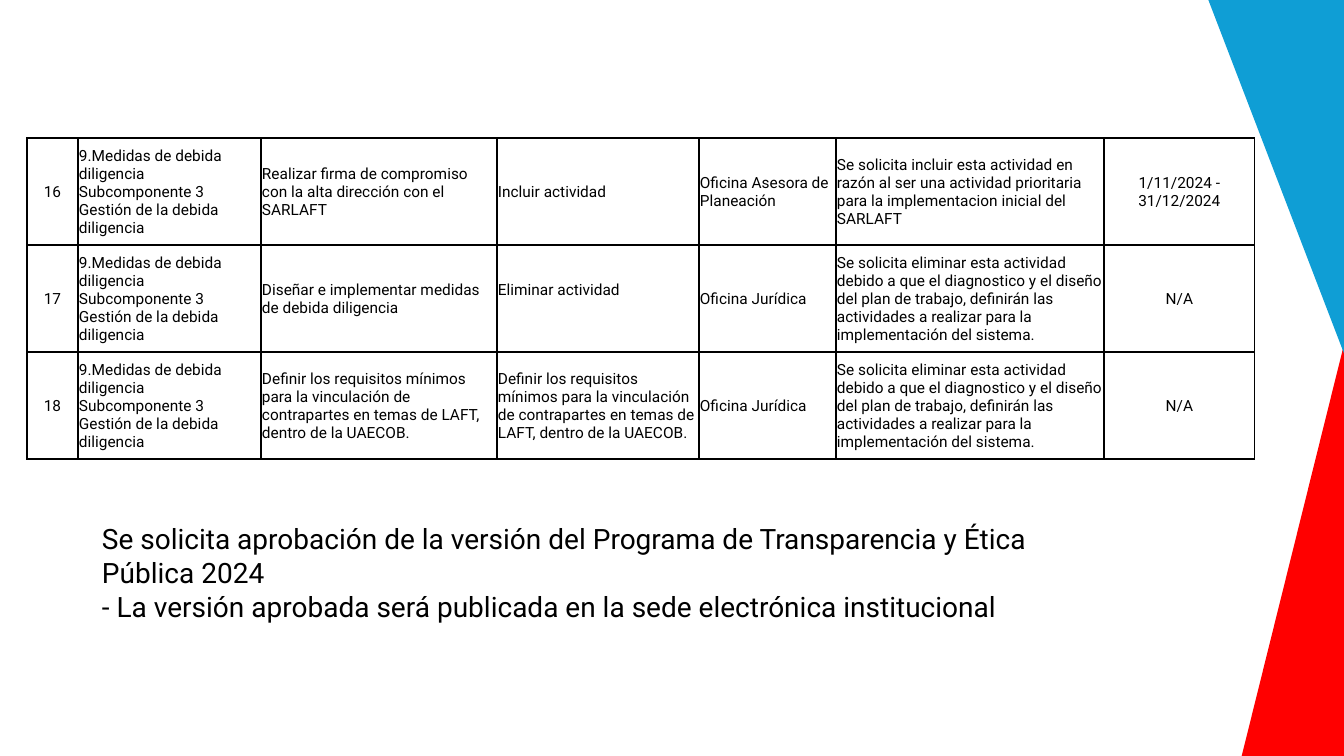
from dataclasses import dataclass

from lxml import etree
from pptx import Presentation
from pptx.dml.color import RGBColor
from pptx.enum.shapes import MSO_SHAPE
from pptx.enum.text import MSO_ANCHOR, MSO_AUTO_SIZE, PP_ALIGN
from pptx.oxml.ns import qn
from pptx.slide import Slide
from pptx.table import _Cell
from pptx.text.text import _Paragraph
from pptx.util import Emu, Pt

SLIDE_WIDTH, SLIDE_HEIGHT = 1344, 756
EMU_PER_PX = 12192000 / SLIDE_WIDTH
BLANK_LAYOUT = 6
RIGHT_TRIANGLE = MSO_SHAPE.RIGHT_TRIANGLE
MIDDLE = MSO_ANCHOR.MIDDLE
FIT_SHAPE = MSO_AUTO_SIZE.SHAPE_TO_FIT_TEXT
LEFT, CENTER = PP_ALIGN.LEFT, PP_ALIGN.CENTER

FONT = "Roboto"
COLORS = {"text": "000000", "border": "000000", "cell": "FFFFFF",
          "red": "FF0000", "blue": "0F9ED5"}
BORDER_WIDTH = Pt(1)
BORDER_SIDES = ("a:lnL", "a:lnR", "a:lnT", "a:lnB")

TABLE_LEFT, TABLE_TOP, ROW_HEIGHT = 27, 138, 107
TEXT_LINE = 18


@dataclass(frozen=True)
class Triangle:
    left: int
    top: int
    width: int
    height: int
    color: str
    rotation: int = 0
    mirrored: bool = False


@dataclass(frozen=True)
class Column:
    width: int
    align: PP_ALIGN = LEFT


@dataclass(frozen=True)
class Activity:
    number: str
    name: str
    change: str
    office: str
    reason: str
    dates: str
    change_lift: int = 0


TRIANGLES = (
    Triangle(1207, 345, 137, 551, "red", mirrored=True),
    Triangle(1208, -1, 137, 357, "blue", rotation=180),
)
COLUMNS = (Column(51, CENTER), Column(183), Column(236), Column(202),
           Column(137), Column(268), Column(151, CENTER))

COMPONENT = ("9.Medidas de debida diligencia\vSubcomponente 3\v"
             "Gestión de la debida diligencia")
REQUIREMENTS = ("Definir los requisitos mínimos para la vinculación de "
                "contrapartes en temas de LAFT, dentro de la UAECOB.")
LEGAL_OFFICE = "Oficina Jurídica"
REMOVAL_REASON = ("Se solicita eliminar esta actividad debido a que el diagnostico "
                  "y el diseño del plan de trabajo, definirán las actividades a "
                  "realizar para la implementación del sistema.")
ACTIVITIES = (
    Activity("16", "Realizar firma de compromiso con la alta dirección con el SARLAFT",
             "Incluir actividad", "Oficina Asesora de Planeación",
             "Se solicita incluir esta actividad en razón al ser una actividad "
             "prioritaria para la implementacion inicial del SARLAFT",
             "1/11/2024 - 31/12/2024"),
    Activity("17", "Diseñar e implementar medidas de debida diligencia",
             "Eliminar actividad", LEGAL_OFFICE, REMOVAL_REASON, "N/A",
             change_lift=TEXT_LINE),
    Activity("18", REQUIREMENTS, REQUIREMENTS, LEGAL_OFFICE, REMOVAL_REASON, "N/A"),
)
APPROVAL = (
    "Se solicita aprobación de la versión del Programa de Transparencia y Ética "
    "Pública 2024",
    "- La versión aprobada será publicada en la sede electrónica institucional",
)


def px(length: int) -> Emu:
    return Emu(round(length * EMU_PER_PX))


def rgb(name: str) -> RGBColor:
    return RGBColor.from_string(COLORS[name])


def format_text(para: _Paragraph, size: int, align: PP_ALIGN = LEFT) -> None:
    para.alignment = align
    para.font.name = FONT
    para.font.size = Pt(size)
    para.font.color.rgb = rgb("text")


def add_triangle(page: Slide, triangle: Triangle) -> None:
    shape = page.shapes.add_shape(
        RIGHT_TRIANGLE, px(triangle.left), px(triangle.top),
        px(triangle.width), px(triangle.height))
    shape.shadow.inherit = False
    shape.fill.solid()
    shape.fill.fore_color.rgb = rgb(triangle.color)
    shape.line.fill.background()
    shape.rotation = triangle.rotation
    if triangle.mirrored:
        shape.element.spPr.find(qn("a:xfrm")).set("flipH", "1")


def add_borders(cell: _Cell) -> None:
    properties = cell._tc.get_or_add_tcPr()
    for side in BORDER_SIDES:
        line = etree.SubElement(properties, qn(side), w=str(BORDER_WIDTH))
        fill = etree.SubElement(line, qn("a:solidFill"))
        etree.SubElement(fill, qn("a:srgbClr"), val=COLORS["border"])


def fill_cell(cell: _Cell, text: str, align: PP_ALIGN, lift: int) -> None:
    cell.text = text
    cell.vertical_anchor = MIDDLE
    cell.margin_left = cell.margin_right = cell.margin_top = px(1)
    cell.margin_bottom = px(lift)
    add_borders(cell)
    cell.fill.solid()
    cell.fill.fore_color.rgb = rgb("cell")
    format_text(cell.text_frame.paragraphs[0], 11, align)


def add_activity_table(page: Slide) -> None:
    width = sum(column.width for column in COLUMNS)
    table = page.shapes.add_table(
        len(ACTIVITIES), len(COLUMNS), px(TABLE_LEFT), px(TABLE_TOP),
        px(width), px(ROW_HEIGHT * len(ACTIVITIES))).table
    table.first_row = table.horz_banding = False
    for index, column in enumerate(COLUMNS):
        table.columns[index].width = px(column.width)
    for row, activity in enumerate(ACTIVITIES):
        table.rows[row].height = px(ROW_HEIGHT)
        texts = (activity.number, COMPONENT, activity.name, activity.change,
                 activity.office, activity.reason, activity.dates)
        for index, (column, text) in enumerate(zip(COLUMNS, texts)):
            lift = activity.change_lift if index == 3 else 0
            fill_cell(table.cell(row, index), text, column.align, lift)


def add_approval(page: Slide) -> None:
    box = page.shapes.add_textbox(px(92), px(517), px(1042), px(78))
    frame = box.text_frame
    frame.word_wrap = True
    frame.auto_size = FIT_SHAPE
    frame.text = "\n".join(APPROVAL)
    for para in frame.paragraphs:
        format_text(para, 20)


def main() -> None:
    deck = Presentation()
    deck.slide_width, deck.slide_height = px(SLIDE_WIDTH), px(SLIDE_HEIGHT)
    page = deck.slides.add_slide(deck.slide_layouts[BLANK_LAYOUT])
    for triangle in TRIANGLES:
        add_triangle(page, triangle)
    add_approval(page)
    add_activity_table(page)
    deck.save("out.pptx")


if __name__ == "__main__":
    main()
